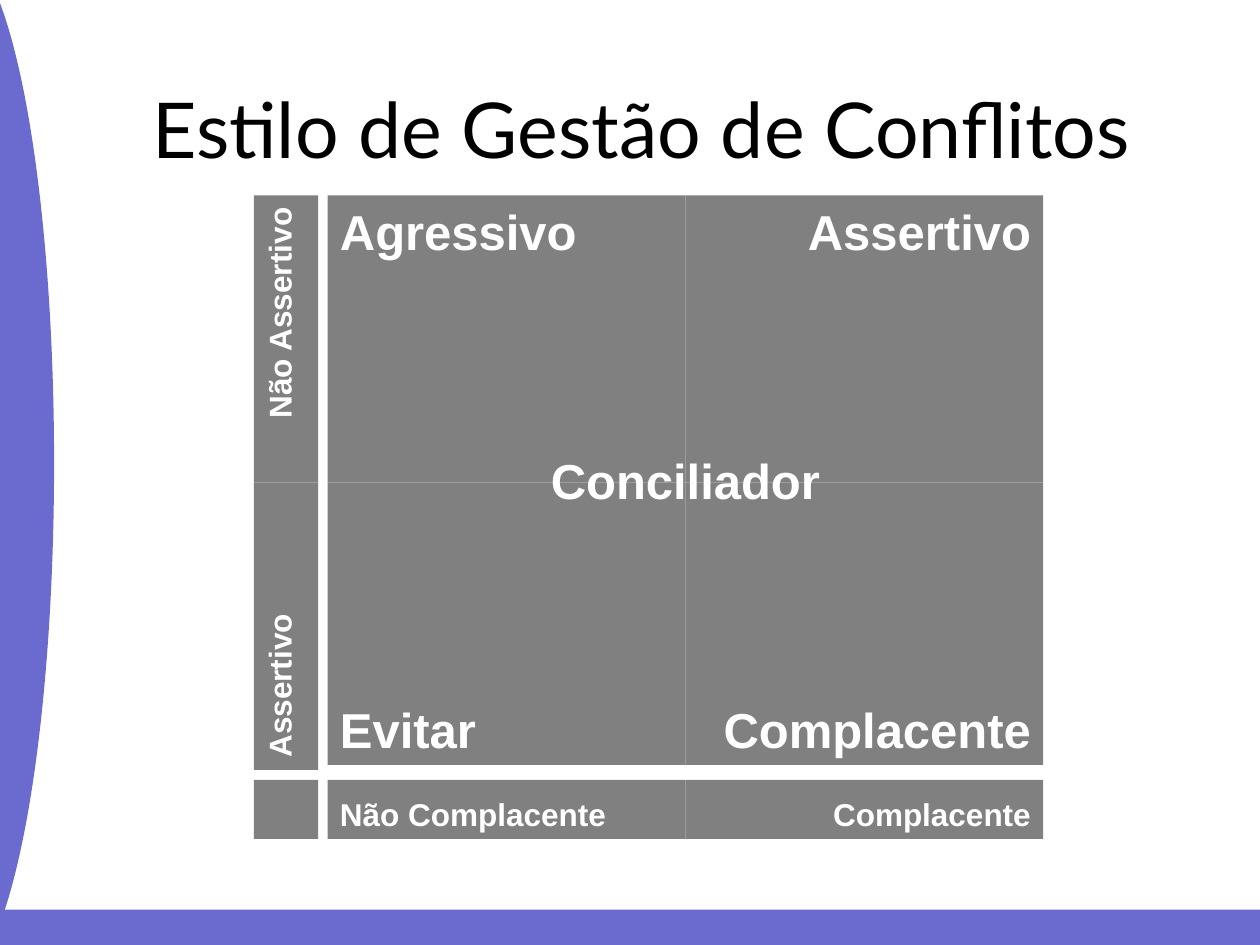
from pptx import Presentation
from pptx import util as u
from pptx.dml import color
from pptx.enum import shapes, text

VIOLET, GRAY, WHITE, BLACK = "6B6BCF", "808080", "FFFFFF", "000000"
LEFT, CENTER, RIGHT = text.PP_ALIGN.LEFT, text.PP_ALIGN.CENTER, text.PP_ALIGN.RIGHT
TOP, MIDDLE, BOTTOM = text.MSO_ANCHOR.TOP, text.MSO_ANCHOR.MIDDLE, text.MSO_ANCHOR.BOTTOM

TITLE = "Estilo de Gestão de Conflitos"
STYLES = [["Agressivo", "Assertivo"], ["Evitar", "Complacente"]]
MIDDLE_STYLE = "Conciliador"
ASSERTIVENESS = ["Não Assertivo", "Assertivo"]
COMPLIANCE = ["Não Complacente", "Complacente"]

GRID_LEFT, GRID_TOP = 187.2, 111.6
CELL_WIDTH, ROW_STEP, CELL_HEIGHTS = 204.5, 164.2, [164.2, 161.3]
AXIS_LEFT, AXIS_WIDTH = 145.1, 36.7
AXIS_TOP, AXIS_HEIGHT = 445.7, 33.8
SIDES = [LEFT, RIGHT]
ANCHORS = [TOP, BOTTOM]


def rgb(value):
    return color.RGBColor.from_string(value)


def write(shape, words, size, align, anchor, font="Arial", ink=WHITE, bold=True):
    frame = shape.text_frame
    frame.text = words
    frame.word_wrap = True
    frame.vertical_anchor = anchor
    paragraph = frame.paragraphs[0]
    paragraph.alignment = align
    for name, value in {"name": font, "size": u.Pt(size), "bold": bold}.items():
        setattr(paragraph.font, name, value)
    paragraph.font.color.rgb = rgb(ink)


def add_block(slide, box, fill=GRAY, kind=shapes.MSO_SHAPE.RECTANGLE):
    shape = slide.shapes.add_shape(kind, *map(u.Pt, box))
    shape.shadow.inherit = False
    shape.fill.solid()
    shape.fill.fore_color.rgb = rgb(fill)
    shape.line.fill.background()
    return shape


def add_title(slide):
    title = slide.shapes.title
    box = {"left": 60.5, "top": 36.7, "width": 612, "height": 72}
    for name, value in box.items():
        setattr(title, name, u.Pt(value))
    write(title, TITLE, 44, CENTER, MIDDLE, "Lato", BLACK, False)


def add_matrix(slide):
    for row, names in enumerate(STYLES):
        for column, name in enumerate(names):
            box = (GRID_LEFT + column * CELL_WIDTH, GRID_TOP + row * ROW_STEP,
                   CELL_WIDTH, CELL_HEIGHTS[row])
            write(add_block(slide, box), name, 28, SIDES[column], ANCHORS[row])
    box = (GRID_LEFT + CELL_WIDTH / 2, GRID_TOP + ROW_STEP / 2, CELL_WIDTH, CELL_HEIGHTS[1])
    label = slide.shapes.add_textbox(*map(u.Pt, box))
    write(label, MIDDLE_STYLE, 28, CENTER, MIDDLE)


def add_axes(slide):
    for column, name in enumerate(COMPLIANCE):
        box = (GRID_LEFT + column * CELL_WIDTH, AXIS_TOP, CELL_WIDTH, AXIS_HEIGHT)
        write(add_block(slide, box), name, 18, SIDES[column], BOTTOM)
    shift = (ROW_STEP - AXIS_WIDTH) / 2
    for row, name in enumerate(ASSERTIVENESS):
        box = (AXIS_LEFT - shift, GRID_TOP + row * ROW_STEP + shift, ROW_STEP, AXIS_WIDTH)
        block = add_block(slide, box)
        block.rotation = 270
        write(block, name, 18, SIDES[1 - row], TOP)
    add_block(slide, (AXIS_LEFT, AXIS_TOP, AXIS_WIDTH, AXIS_HEIGHT))


def main():
    presentation = Presentation()
    presentation.slide_width, presentation.slide_height = u.Pt(720), u.Pt(540)
    slide = presentation.slides.add_slide(presentation.slide_layouts[5])
    add_block(slide, (0, 519.8, 720, 20.2), VIOLET)
    add_block(slide, (-82.1, -30.2, 113, 589.7), VIOLET, shapes.MSO_SHAPE.OVAL)
    add_title(slide)
    add_matrix(slide)
    add_axes(slide)
    presentation.save("out.pptx")


if __name__ == "__main__":
    main()
